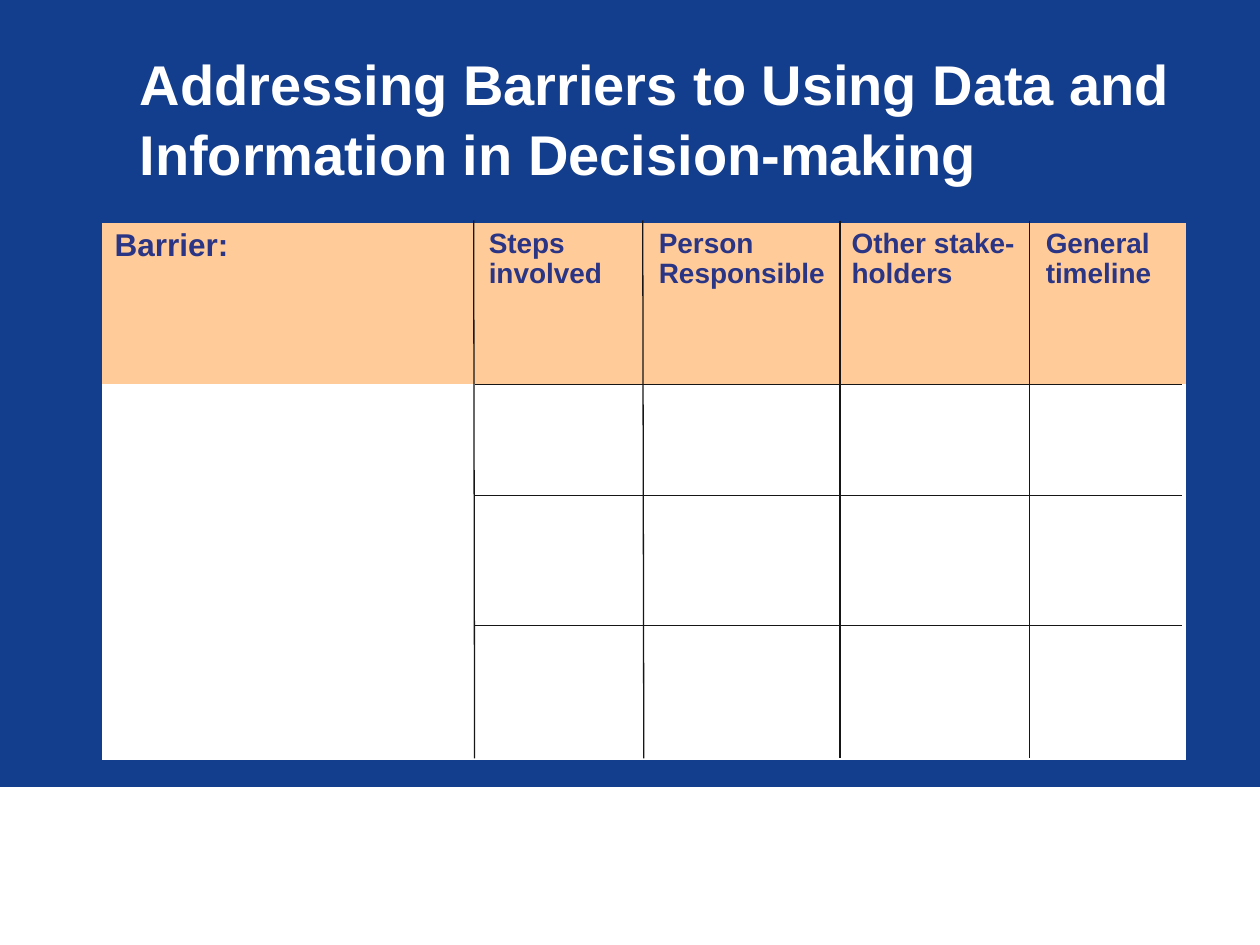
from typing import NamedTuple

from lxml import etree
from pptx import Presentation
from pptx.dml.color import RGBColor
from pptx.enum.shapes import MSO_CONNECTOR, MSO_SHAPE
from pptx.enum.text import MSO_ANCHOR
from pptx.oxml.ns import qn
from pptx.util import Pt

STRAIGHT = MSO_CONNECTOR.STRAIGHT
RECTANGLE = MSO_SHAPE.RECTANGLE
MIDDLE = MSO_ANCHOR.MIDDLE

FONT = "Arial"
COLORS = {
    "background": "133D8D",
    "white": "FFFFFF",
    "header": "FFCC99",
    "header_text": "2B3585",
    "rule": "161616",
}
SLIDE_W, SLIDE_H = 720, 540
TABLE_LEFT, TABLE_TOP = 58.3, 127.4
ROW_HEIGHTS = (92.2, 64.1, 150.5)
RULE_TOP, RULE_BOTTOM = 126, 433.4
RULE_LEFT, RULE_RIGHT = 271.4, 675.4


class Column(NamedTuple):
    heading: tuple[str, ...]
    width: float
    size: float = 16


class Rule(NamedTuple):
    x1: float
    y1: float
    x2: float
    y2: float


COLUMNS = (
    Column(("Barrier:",), 213.8, 18),
    Column(("Steps involved",), 97.2),
    Column(("Person", "Responsible"), 110.2),
    Column(("Other stake-holders",), 110.9),
    Column(("General timeline",), 87.1),
)
VERTICALS = ((270.7, 271.2), (367.3, 367.9), (480, 480), (588.2, 588.2))
HORIZONTALS = (219.6, 283, 357.5)
RULES = [Rule(x1, RULE_TOP, x2, RULE_BOTTOM) for x1, x2 in VERTICALS] + [
    Rule(RULE_LEFT, y, RULE_RIGHT, y) for y in HORIZONTALS
]


def rgb(name: str) -> RGBColor:
    """Return the named colour."""
    return RGBColor.from_string(COLORS[name])


def style(p, size: float, color: str, spacing: float) -> None:
    """Set the bold font and line spacing of a paragraph."""
    p.line_spacing = spacing
    p.font.name = FONT
    p.font.size = Pt(size)
    p.font.bold = True
    p.font.color.rgb = rgb(color)


def add_footer_band(slide) -> None:
    """Draw the white band along the bottom of the slide."""
    sp = slide.shapes.add_shape(RECTANGLE, 0, Pt(450), Pt(SLIDE_W), Pt(90))
    sp.shadow.inherit = False
    sp.fill.solid()
    sp.fill.fore_color.rgb = rgb("white")
    sp.line.color.rgb = rgb("white")
    sp.line.width = Pt(0.75)


def add_title(slide, text: str) -> None:
    """Write the slide title."""
    tf = slide.shapes.add_textbox(Pt(72.7), Pt(21.6), Pt(611.3), Pt(90)).text_frame
    tf.word_wrap = True
    tf.vertical_anchor = MIDDLE
    tf.text = text
    style(tf.paragraphs[0], 32, "white", 1.04)


def format_cell(cell, fill: str) -> None:
    """Fill a cell and remove its borders."""
    cell.fill.solid()
    cell.fill.fore_color.rgb = rgb(fill)
    tcPr = cell._tc.get_or_add_tcPr()
    for i, tag in enumerate(("a:lnL", "a:lnR", "a:lnT", "a:lnB")):
        ln = etree.Element(qn(tag))
        etree.SubElement(ln, qn("a:noFill"))
        tcPr.insert(i, ln)


def add_barrier_table(slide) -> None:
    """Build the barrier planning table."""
    width = sum(column.width for column in COLUMNS)
    table = slide.shapes.add_table(
        len(ROW_HEIGHTS), len(COLUMNS),
        Pt(TABLE_LEFT), Pt(TABLE_TOP), Pt(width), Pt(sum(ROW_HEIGHTS)),
    ).table
    table.first_row = False
    table.horz_banding = False
    for r, height in enumerate(ROW_HEIGHTS):
        table.rows[r].height = Pt(height)
        for c in range(len(COLUMNS)):
            format_cell(table.cell(r, c), "white" if r else "header")
    for c, column in enumerate(COLUMNS):
        table.columns[c].width = Pt(column.width)
        tf = table.cell(0, c).text_frame
        tf.text = "\n".join(column.heading)
        for p in tf.paragraphs:
            style(p, column.size, "header_text", 0.96)
    table.cell(1, 0).merge(table.cell(2, 0))


def add_rule(slide, rule: Rule) -> None:
    """Draw one grid rule over the table."""
    line = slide.shapes.add_connector(STRAIGHT, *(Pt(v) for v in rule))
    line.line.color.rgb = rgb("rule")
    line.line.width = Pt(0.75)
    etree.SubElement(line._element.spPr, qn("a:effectLst"))


def main() -> None:
    """Build and save the slide."""
    prs = Presentation()
    prs.slide_width, prs.slide_height = Pt(SLIDE_W), Pt(SLIDE_H)
    slide = prs.slides.add_slide(prs.slide_layouts[6])
    slide.background.fill.solid()
    slide.background.fill.fore_color.rgb = rgb("background")
    add_footer_band(slide)
    add_barrier_table(slide)
    add_title(slide, "Addressing Barriers to Using Data and Information in Decision-making")
    for rule in RULES:
        add_rule(slide, rule)
    prs.save("out.pptx")


if __name__ == "__main__":
    main()
